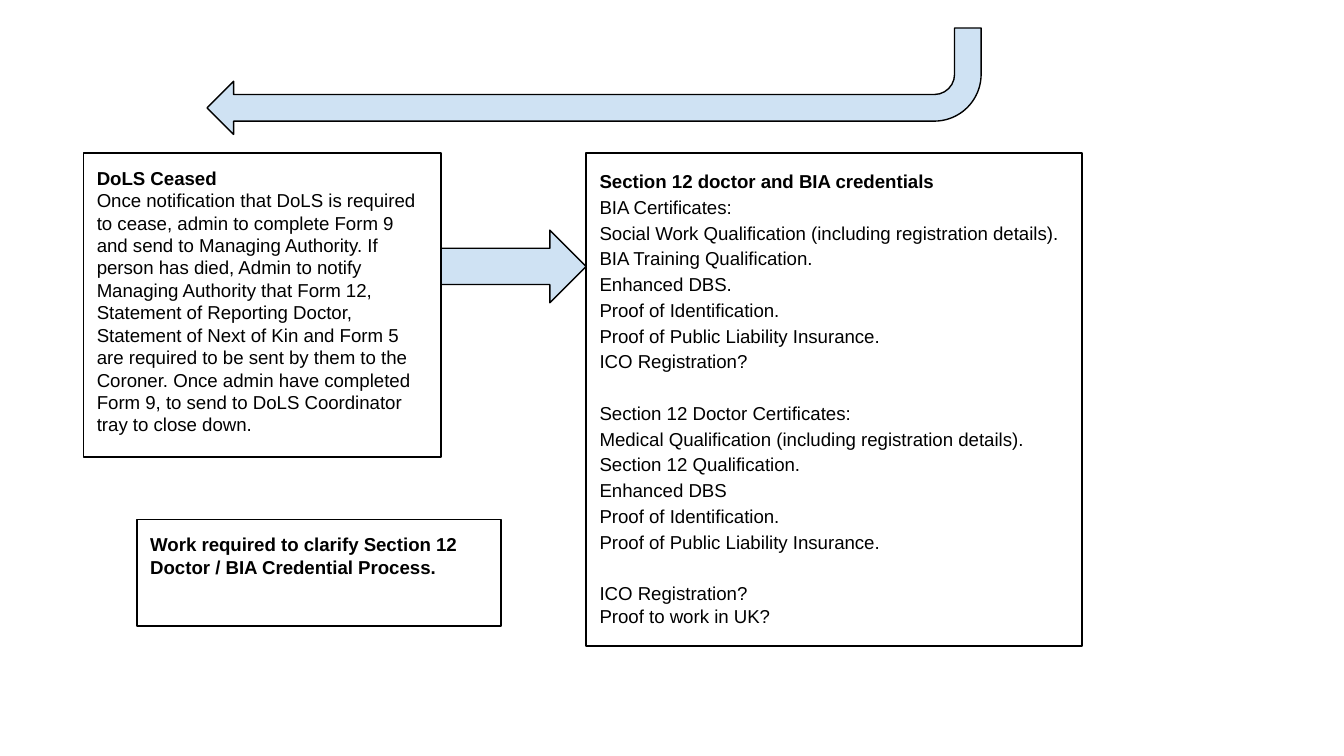
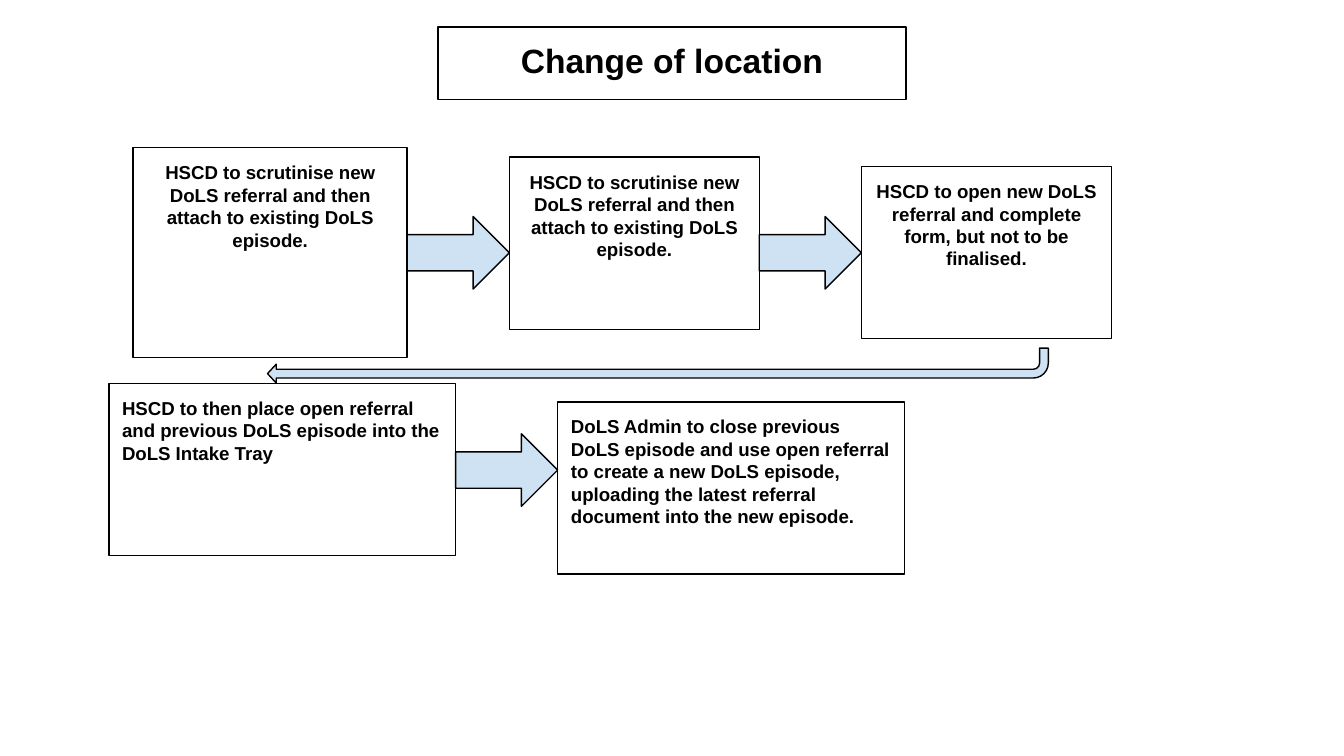
from dataclasses import dataclass

from lxml import etree
from pptx import Presentation
from pptx import util as u
from pptx.dml.color import RGBColor
from pptx.enum import shapes, text
from pptx.oxml.ns import qn

COLOURS = {"ink": "000000", "arrow": "CFE2F3"}
FONT = "Arial"
TITLE_AND_CONTENT, TITLE_ONLY = 1, 5
INSET = 7.2
ARROW_HEIGHT = 38.9
LINE_SPACING = 1.15
GROUP_GAP = 13.8


@dataclass(frozen=True)
class Box:
    left: float
    top: float
    width: float
    height: float
    heading: str
    body: str = ""
    centred: bool = False
    size: float = 10

    @property
    def right(self) -> float:
        return self.left + self.width


@dataclass(frozen=True)
class ReturnArrow:
    left: float
    top: float
    width: float
    height: float
    adjustments: tuple[float, ...]


CEASED = Box(
    44.8, 82, 191.5, 162.9, "DoLS Ceased",
    "Once notification that DoLS is required to cease, admin to complete Form 9 and send to "
    "Managing Authority. If person has died, Admin to notify Managing Authority that Form 12, "
    "Statement of Reporting Doctor, Statement of Next of Kin and Form 5 are required to be sent "
    "by them to the Coroner. Once admin have completed Form 9, to send to DoLS Coordinator "
    "tray to close down.",
)
CREDENTIAL_GROUPS = [
    [
        "BIA Certificates:",
        "Social Work Qualification (including registration details).",
        "BIA Training Qualification.",
        "Enhanced DBS.",
        "Proof of Identification.",
        "Proof of Public Liability Insurance.",
        "ICO Registration?",
    ],
    [
        "Section 12 Doctor Certificates:",
        "Medical Qualification (including registration details).",
        "Section 12 Qualification.",
        "Enhanced DBS",
        "Proof of Identification.",
        "Proof of Public Liability Insurance.",
    ],
    ["ICO Registration?", "Proof to work in UK?"],
]
CREDENTIALS = Box(
    314, 82, 265.7, 264.2, "Section 12 doctor and BIA credentials",
    "\n".join(line for group in CREDENTIAL_GROUPS for line in group),
)
CLARIFY = Box(73.4, 278.4, 195.1, 57,
              "Work required to clarify Section 12 Doctor / BIA Credential Process.")
CEASED_RETURN = ReturnArrow(110.9, 15, 414.7, 57, (0.25, 0.25, 0.25, 0.44))

LOCATION_TITLE = Box(234.7, 14.4, 250.6, 38.9, "Change of location", centred=True, size=18)
SCRUTINISE = "HSCD to scrutinise new DoLS referral and then attach to existing DoLS episode."
REFERRAL_ROW = [
    Box(71.3, 79.2, 146.9, 112.3, SCRUTINISE, centred=True),
    Box(272.9, 84.2, 133.9, 92.2, SCRUTINISE, centred=True),
    Box(461.5, 89.2, 133.9, 92.2,
        "HSCD to open new DoLS referral and complete form, but not to be finalised.",
        centred=True),
]
EPISODE_ROW = [
    Box(58.3, 205.4, 185.8, 92.2,
        "HSCD to then place open referral and previous DoLS episode into the DoLS Intake Tray"),
    Box(298.8, 215.3, 185.8, 92.2,
        "DoLS Admin to close previous DoLS episode and use open referral to create a new DoLS "
        "episode, uploading the latest referral document into the new episode."),
]
LOCATION_RETURN = ReturnArrow(143.3, 186.5, 418.3, 18.7, (0.25, 0.27, 0.25, 0.43))


def colour(name: str) -> RGBColor:
    return RGBColor.from_string(COLOURS[name])


def outline(shape) -> None:
    shape.line.color.rgb = colour("ink")
    shape.line.width = u.Pt(0.75)


def fill_box(shape, box: Box) -> None:
    shape.left, shape.top = u.Pt(box.left), u.Pt(box.top)
    shape.width, shape.height = u.Pt(box.width), u.Pt(box.height)
    shape.fill.background()
    outline(shape)
    frame = shape.text_frame
    frame.text = "\n".join(filter(None, (box.heading, box.body)))
    frame.word_wrap = True
    frame.auto_size = text.MSO_AUTO_SIZE.NONE
    frame.vertical_anchor = text.MSO_ANCHOR.TOP
    frame.margin_left = frame.margin_right = u.Pt(INSET)
    frame.margin_top = frame.margin_bottom = u.Pt(INSET)
    for index, paragraph in enumerate(frame.paragraphs):
        paragraph.alignment = text.PP_ALIGN.CENTER if box.centred else text.PP_ALIGN.LEFT
        for run in paragraph.runs:
            run.font.name = FONT
            run.font.size = u.Pt(box.size)
            run.font.bold = index == 0
            run.font.color.rgb = colour("ink")


def add_box(slide, box: Box) -> None:
    shape = slide.shapes.add_shape(shapes.MSO_SHAPE.RECTANGLE, 0, 0, 0, 0)
    shape.shadow.inherit = False
    fill_box(shape, box)


def add_arrow(slide, kind: shapes.MSO_SHAPE, left: float, top: float,
              width: float, height: float, adjustments: tuple[float, ...]):
    shape = slide.shapes.add_shape(kind, u.Pt(left), u.Pt(top), u.Pt(width), u.Pt(height))
    shape.shadow.inherit = False
    for index, value in enumerate(adjustments):
        shape.adjustments[index] = value
    shape.fill.solid()
    shape.fill.fore_color.rgb = colour("arrow")
    outline(shape)
    return shape


def add_step_arrow(slide, source: Box, target: Box, top: float) -> None:
    add_arrow(slide, shapes.MSO_SHAPE.RIGHT_ARROW, source.right, top,
              target.left - source.right, ARROW_HEIGHT, (0.5, 0.5))


def add_return_arrow(slide, arrow: ReturnArrow) -> None:
    shape = add_arrow(slide, shapes.MSO_SHAPE.BENT_ARROW, arrow.left, arrow.top,
                      arrow.width, arrow.height, arrow.adjustments)
    shape.rotation = 180


def add_row(slide, boxes: list[Box], arrow_top: float) -> None:
    for box in boxes:
        add_box(slide, box)
    for source, target in zip(boxes, boxes[1:]):
        add_step_arrow(slide, source, target, arrow_top)


def format_credentials(shape) -> None:
    paragraphs = shape.text_frame.paragraphs
    for paragraph in paragraphs:
        paragraph.line_spacing = LINE_SPACING
        paragraph.space_before = u.Pt(0)
        properties = paragraph._p.get_or_add_pPr()
        properties.set("marL", "0")
        properties.set("indent", "0")
        etree.SubElement(properties, qn("a:buNone"))
    paragraphs[-1].line_spacing = 1.0
    first = 1
    for group in CREDENTIAL_GROUPS[:-1]:
        first += len(group)
        paragraphs[first].space_before = u.Pt(GROUP_GAP)


def build_ceased_slide(presentation) -> None:
    slide = presentation.slides.add_slide(presentation.slide_layouts[TITLE_AND_CONTENT])
    title = slide.shapes.title.element
    title.getparent().remove(title)
    credentials = slide.placeholders[1]
    fill_box(credentials, CREDENTIALS)
    format_credentials(credentials)
    add_box(slide, CEASED)
    add_step_arrow(slide, CEASED, CREDENTIALS, 123.3)
    add_return_arrow(slide, CEASED_RETURN)
    add_box(slide, CLARIFY)


def build_location_slide(presentation) -> None:
    slide = presentation.slides.add_slide(presentation.slide_layouts[TITLE_ONLY])
    fill_box(slide.shapes.title, LOCATION_TITLE)
    add_row(slide, REFERRAL_ROW, 116)
    add_return_arrow(slide, LOCATION_RETURN)
    add_row(slide, EPISODE_ROW, 232.4)


def main() -> None:
    presentation = Presentation()
    presentation.slide_width, presentation.slide_height = u.Pt(720), u.Pt(405)
    build_ceased_slide(presentation)
    build_location_slide(presentation)
    presentation.save("out.pptx")


if __name__ == "__main__":
    main()
